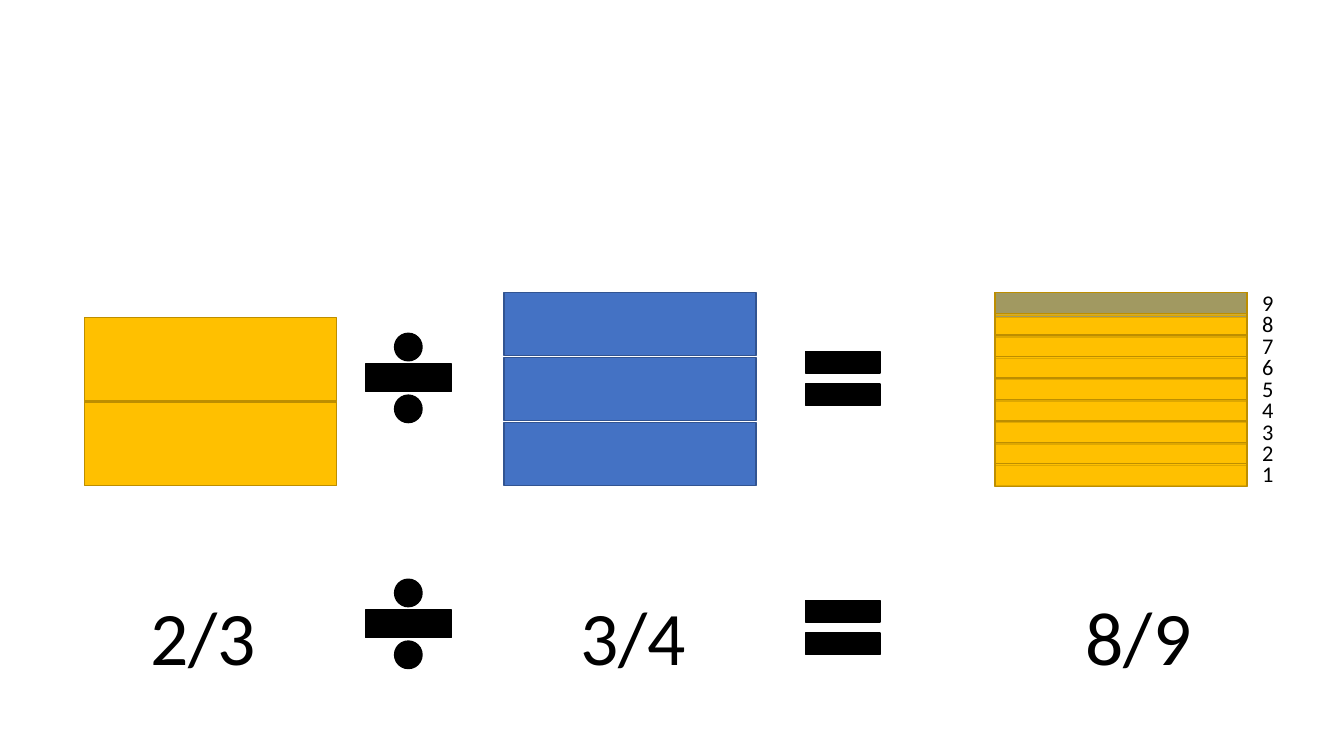
from dataclasses import dataclass

from lxml import etree
from pptx import Presentation
from pptx import util as u
from pptx.dml.color import RGBColor
from pptx.enum import shapes, text
from pptx.oxml.ns import qn


@dataclass(frozen=True)
class Theme:
    font: str = "Calibri"
    ink: str = "000000"
    gold: tuple = ("FFC000", "BD8E00")
    blue: tuple = ("4472C4", "325491")
    fraction_size: int = 54
    count_size: int = 16
    line_width: int = 1


class FractionPage:
    """Holds the theme, the current slide and the place where shapes are added."""

    def __init__(self, deck, theme):
        self.theme = theme
        self.page = deck.slides.add_slide(deck.slide_layouts[6])
        self.target = self.page.shapes

    def start_group(self):
        self.target = self.page.shapes.add_group_shape().shapes

    def end_group(self):
        self.target = self.page.shapes

    def block(self, kind, left, top, width, height, colors, opacity=100):
        fill, line = colors
        shape = self.target.add_shape(kind, *map(u.Inches, (left, top, width, height)))
        shape.shadow.inherit = False
        shape.fill.solid()
        shape.fill.fore_color.rgb = RGBColor.from_string(fill)
        shape.line.color.rgb = RGBColor.from_string(line)
        shape.line.width = u.Pt(self.theme.line_width)
        if opacity < 100:
            color = shape.fill._xPr.find(qn("a:solidFill"))[0]
            etree.SubElement(color, qn("a:alpha"), val=str(opacity * 1000))

    def bar(self, left, top, height, colors, opacity=100):
        self.block(shapes.MSO_SHAPE.RECTANGLE, left, top, BAR_WIDTH, height, colors, opacity)

    def label(self, words, left, top, width, height, size):
        box = self.target.add_textbox(*map(u.Inches, (left, top, width, height)))
        frame_format = {"word_wrap": False, "auto_size": text.MSO_AUTO_SIZE.SHAPE_TO_FIT_TEXT}
        for name, value in frame_format.items():
            setattr(box.text_frame, name, value)
        span = box.text_frame.paragraphs[0].add_run()
        span.text = words
        for name, value in {"name": self.theme.font, "size": u.Pt(size)}.items():
            setattr(span.font, name, value)
        span.font.color.rgb = RGBColor.from_string(self.theme.ink)


BAR_WIDTH = 2.5
DIVIDEND_LEFT, DIVISOR_LEFT, QUOTIENT_LEFT = 0.84, 5, 9.87
WHOLE_TOP = 2.9
THIRD_HEIGHT, QUARTER_HEIGHT, NINTH_HEIGHT = 0.83, 0.63, 0.23


def spread(first, last, count):
    """Evenly spaced positions from first to last."""
    return [first + (last - first) * index / (count - 1) for index in range(count)]


def main():
    theme = Theme()
    deck = Presentation()
    deck.slide_width, deck.slide_height = u.Inches(13.33), u.Inches(7.5)
    page = FractionPage(deck, theme)

    # Operators of the model row and the number row
    black = (theme.ink, theme.ink)
    for divide_top, equal_top in ((3.17, 3.3), (5.61, 5.77)):
        page.block(shapes.MSO_SHAPE.MATH_DIVIDE, 3.47, divide_top, 1.16, 1.16, black)
        page.block(shapes.MSO_SHAPE.MATH_EQUAL, 7.86, equal_top, 1, 0.91, black)

    # Fractions
    for words, left in (("2/3", 1.39), ("3/4", 5.66), ("8/9", 10.67)):
        page.label(words, left, 5.8, 1.26, 1.01, theme.fraction_size)

    # Dividend: two thirds
    page.start_group()
    for top in spread(3.15, 3.99, 2):
        page.bar(DIVIDEND_LEFT, top, THIRD_HEIGHT, theme.gold)

    # Divisor: three quarters, repeated beneath the quotient
    for left in (DIVISOR_LEFT, QUOTIENT_LEFT):
        page.start_group()
        for top in spread(4.19, WHOLE_TOP, 3):
            page.bar(left, top, QUARTER_HEIGHT, theme.blue)

    # Quotient: the dividend laid over the divisor, then cut into ninths
    page.bar(QUOTIENT_LEFT, 3.15, 1.67, theme.gold)
    for top in spread(WHOLE_TOP, 4.6, 9):
        page.bar(QUOTIENT_LEFT, top, NINTH_HEIGHT, theme.gold, opacity=50)

    # Count of the ninths, from the bottom up
    for number, top in enumerate(spread(4.52, 2.82, 9), start=1):
        page.label(str(number), 12.42, top, 0.32, 0.37, theme.count_size)
    page.end_group()

    deck.save("out.pptx")


if __name__ == "__main__":
    main()
